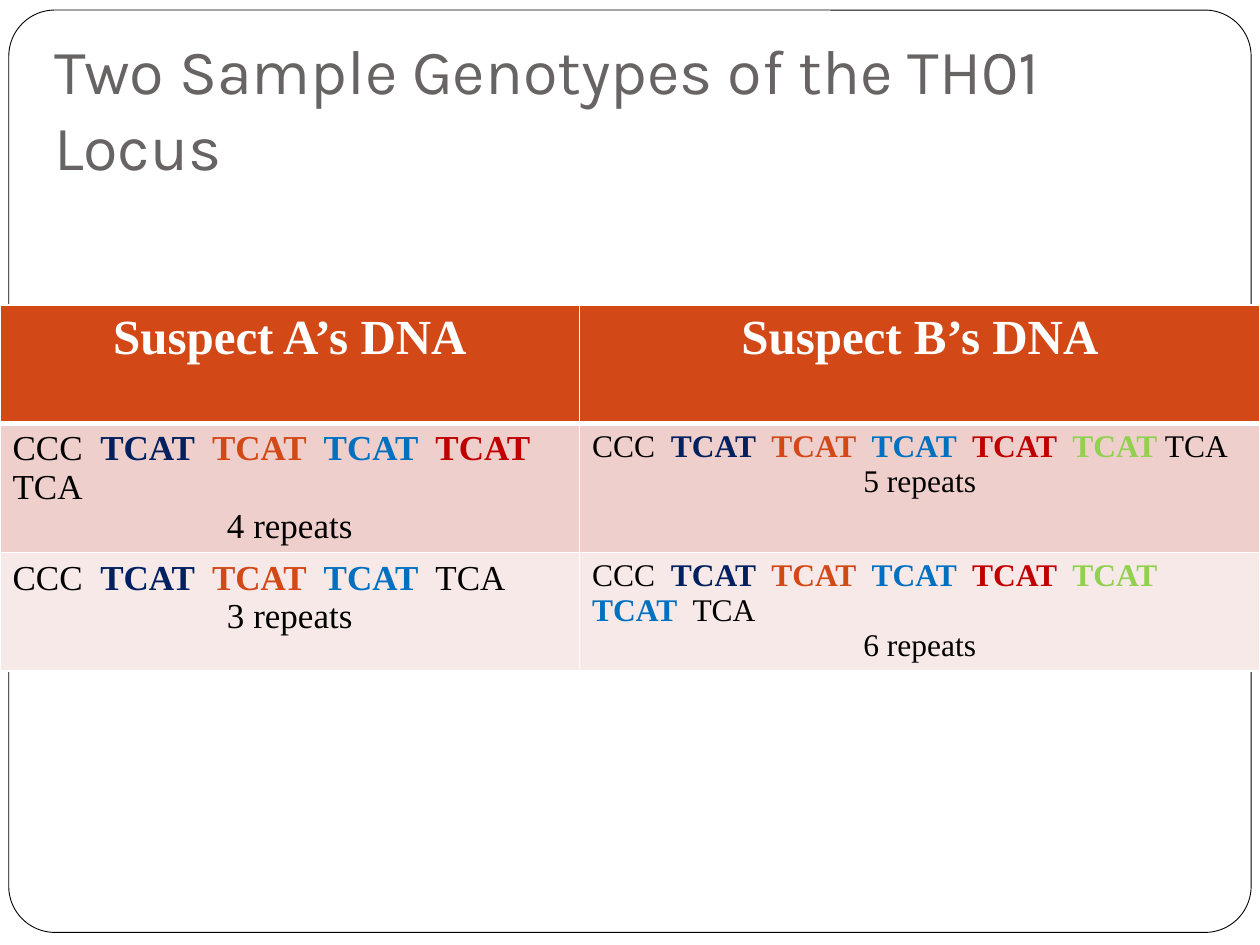
from lxml import etree
from pptx import Presentation
from pptx.dml.color import RGBColor
from pptx.enum.shapes import MSO_SHAPE
from pptx.enum.text import MSO_ANCHOR, PP_ALIGN
from pptx.oxml.ns import qn
from pptx.util import Inches, Pt

ROUNDED = MSO_SHAPE.ROUNDED_RECTANGLE
BOTTOM = MSO_ANCHOR.BOTTOM
LEFT, CENTER = PP_ALIGN.LEFT, PP_ALIGN.CENTER

# Content
TITLE = "Two Sample Genotypes of the TH01 Locus"
TITLE_FONT, TABLE_FONT = "Karla", "Times New Roman"
BLACK, WHITE, GRAY = "000000", "FFFFFF", "696464"
NAVY, ORANGE, BLUE, RED, GREEN = "002060", "D34817", "0070C0", "C00000", "92D050"

HEADERS = ["Suspect A’s DNA", "Suspect B’s DNA"]
# Each allele: its repeat units as (text, colour), then the caption
ALLELES = [
    [
        ([("TCAT  ", NAVY), ("TCAT  ", ORANGE), ("TCAT  ", BLUE), ("TCAT  ", RED)],
         "4 repeats"),
        ([("TCAT  ", NAVY), ("TCAT  ", ORANGE), ("TCAT  ", BLUE), ("TCAT  ", RED),
          ("TCAT ", GREEN)], "5 repeats"),
    ],
    [
        ([("TCAT  ", NAVY), ("TCAT  ", ORANGE), ("TCAT  ", BLUE)], "3 repeats"),
        ([("TCAT  ", NAVY), ("TCAT  ", ORANGE), ("TCAT  ", BLUE), ("TCAT  ", RED),
          ("TCAT   ", GREEN), ("TCAT  ", BLUE)], "6 repeats"),
    ],
]
ROW_FILLS = ["EFCFCC", "F7E9E8"]
COLUMN_SIZES = [20, 18]

# Layout
SLIDE_WIDTH, SLIDE_HEIGHT = 10, 7.5
COLUMN_SHARES = [0.46, 0.54]
TABLE_TOP, ROW_HEIGHT = 2.42, 0.94


def color(value):
    return RGBColor.from_string(value)


def add_run(paragraph, text, font_name, size, hex_color, bold=False):
    run = paragraph.add_run()
    run.text = text
    run.font.name = font_name
    run.font.size = Pt(size)
    run.font.bold = bold
    run.font.color.rgb = color(hex_color)


def style_cell(cell, fill, bottom_width=1, top_width=1):
    """Draw white borders and fill the cell; borders precede the fill in XML."""
    properties = cell._tc.get_or_add_tcPr()
    widths = {"a:lnL": 1, "a:lnR": 1, "a:lnT": top_width, "a:lnB": bottom_width}
    for tag, width in widths.items():
        line = etree.SubElement(properties, qn(tag), w=str(Pt(width)))
        solid = etree.SubElement(line, qn("a:solidFill"))
        etree.SubElement(solid, qn("a:srgbClr"), val=WHITE)
    cell.fill.solid()
    cell.fill.fore_color.rgb = color(fill)


def add_title(slide):
    title = slide.shapes.title
    title.left, title.top = Inches(0.33), Inches(0.3)
    title.width, title.height = Inches(9.33), Inches(1.25)
    frame = title.text_frame
    frame.word_wrap = True
    frame.vertical_anchor = BOTTOM
    frame.margin_bottom = Inches(0.1)
    paragraph = frame.paragraphs[0]
    paragraph.alignment = LEFT
    add_run(paragraph, TITLE, TITLE_FONT, 36, GRAY)


def add_border(slide):
    border = slide.shapes.add_shape(
        ROUNDED, Inches(0.07), Inches(0.08), Inches(9.86), Inches(7.32))
    border.adjustments[0] = 0.05
    border.shadow.inherit = False
    border.fill.solid()
    border.fill.fore_color.rgb = color(WHITE)
    border.line.color.rgb = color(BLACK)
    border.line.width = Pt(0.5)
    # Place the border behind the title
    slide.shapes.title.element.addprevious(border.element)


def add_genotype_table(slide):
    row_count = 1 + len(ALLELES)
    table = slide.shapes.add_table(
        row_count, len(HEADERS), 0, Inches(TABLE_TOP),
        Inches(SLIDE_WIDTH), Inches(ROW_HEIGHT * row_count)).table
    for column, share in zip(table.columns, COLUMN_SHARES):
        column.width = Inches(SLIDE_WIDTH * share)
    for row in table.rows:
        row.height = Inches(ROW_HEIGHT)

    # Header row
    for column, header in enumerate(HEADERS):
        cell = table.cell(0, column)
        style_cell(cell, ORANGE, bottom_width=3)
        paragraph = cell.text_frame.paragraphs[0]
        paragraph.alignment = CENTER
        add_run(paragraph, header, TABLE_FONT, 28, WHITE, bold=True)

    # Allele rows
    for row, (alleles, fill) in enumerate(zip(ALLELES, ROW_FILLS), start=1):
        for column, (repeats, caption) in enumerate(alleles):
            cell = table.cell(row, column)
            style_cell(cell, fill, top_width=3 if row == 1 else 1)
            size = COLUMN_SIZES[column]
            sequence = cell.text_frame.paragraphs[0]
            add_run(sequence, "CCC  ", TABLE_FONT, size, BLACK)
            for text, repeat_color in repeats:
                add_run(sequence, text, TABLE_FONT, size, repeat_color, bold=True)
            add_run(sequence, "TCA", TABLE_FONT, size, BLACK)
            summary = cell.text_frame.add_paragraph()
            summary.alignment = CENTER
            add_run(summary, caption, TABLE_FONT, size, BLACK)


def main():
    presentation = Presentation()
    presentation.slide_width = Inches(SLIDE_WIDTH)
    presentation.slide_height = Inches(SLIDE_HEIGHT)
    title_only = presentation.slide_layouts[5]
    slide = presentation.slides.add_slide(title_only)
    add_title(slide)
    add_border(slide)
    add_genotype_table(slide)
    presentation.save("out.pptx")


if __name__ == "__main__":
    main()
